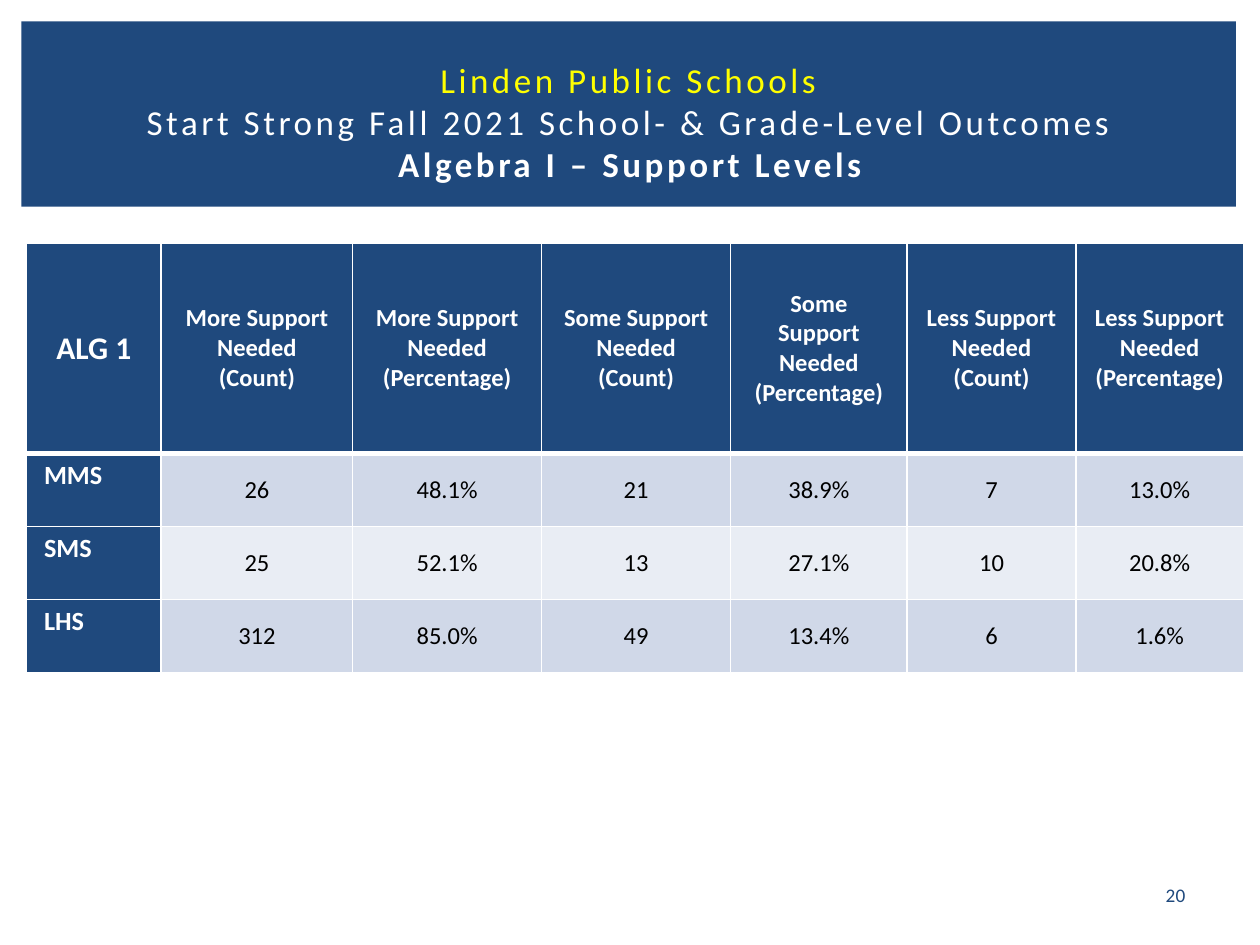
from lxml.etree import SubElement
from pptx import Presentation
from pptx.dml.color import RGBColor as RGB
from pptx.enum.shapes import MSO_SHAPE as Shape
from pptx.enum.text import MSO_ANCHOR as Anchor, MSO_AUTO_SIZE as Auto, PP_ALIGN as Align
from pptx.oxml.ns import qn
from pptx.util import Inches, Pt

# Content
TITLE = [  # text, colour, bold
    ("Linden Public Schools", "gold", False),
    ("Start Strong Fall 2021 School- & Grade-Level Outcomes", "white", False),
    ("Algebra I – Support Levels", "white", True),
]
LEVELS = ["More", "Some", "Less"]
UNITS = ["Count", "Percentage"]
SCORES = [
    ("MMS", "26", "48.1%", "21", "38.9%", "7", "13.0%"),
    ("SMS", "25", "52.1%", "13", "27.1%", "10", "20.8%"),
    ("LHS", "312", "85.0%", "49", "13.4%", "6", "1.6%"),
]
PAGE = "20"
COLS = [1.07, 1.52, 1.5, 1.5, 1.4, 1.34, 1.33]
ROWS = [1.67] + [0.58] * len(SCORES)

THEME = {
    "font": "Calibri",
    "navy": "1F497D", "gold": "FFFF00", "white": "FFFFFF", "black": "000000",
    "bands": ["D0D8E8", "E9EDF4"],
    "title": 20, "corner": 18, "school": 15, "body": 14, "page": 11,
}


def paint(run, size, color, bold=False):
    font = run.font
    font.name = THEME["font"]
    font.size = Pt(size)
    font.bold = bold
    font.color.rgb = RGB.from_string(color)


def border(cell, side, width):
    line = SubElement(cell._tc.get_or_add_tcPr(), qn(f"a:ln{side}"), w=str(Pt(width)))
    fill = SubElement(line, qn("a:solidFill"))
    SubElement(fill, qn("a:srgbClr"), val=THEME["white"])


def box(at):
    return [Inches(n) for n in at]


deck = Presentation()
deck.slide_width, deck.slide_height = Inches(10), Inches(7.5)
slide = deck.slides.add_slide(deck.slide_layouts[5])
shapes = slide.shapes

# Banner, behind the title
banner = shapes.add_shape(Shape.RECTANGLE, *box((0.17, 0.17, 9.64, 1.47)))
banner.shadow.inherit = False
banner.fill.solid()
banner.fill.fore_color.rgb = RGB.from_string(THEME["navy"])
banner.line.fill.background()
shapes._spTree.insert(2, banner._element)

# Title
title = shapes.title
title.left, title.top, title.width, title.height = box((0.28, 0.39, 9.44, 1.15))
frame = title.text_frame
frame.text = "\v".join(text for text, _, _ in TITLE)
frame.auto_size = Auto.NONE
frame.vertical_anchor = Anchor.MIDDLE
para = frame.paragraphs[0]
para.alignment = Align.CENTER
para.line_spacing = 1.0
for run, (_, color, bold) in zip(para.runs, TITLE):
    paint(run, THEME["title"], THEME[color], bold)
    run._r.get_or_add_rPr().set("spc", "200")

# Table of support levels
head = ["ALG 1"] + [f"{lev} Support Needed\n({unit})" for lev in LEVELS for unit in UNITS]
grid = [head] + SCORES
table = shapes.add_table(len(ROWS), len(COLS),
                         *box((0.21, 1.93, sum(COLS), sum(ROWS)))).table
for col, width in zip(table.columns, COLS):
    col.width = Inches(width)
for row, height in zip(table.rows, ROWS):
    row.height = Inches(height)

for r, texts in enumerate(grid):
    for c, text in enumerate(texts):
        cell = table.cell(r, c)
        dark = r == 0 or c == 0
        school = r > 0 and c == 0
        for side in "LRTB":
            thick = (r, side) in ((0, "B"), (1, "T"))
            border(cell, side, 3 if thick else 1)
        cell.fill.solid()
        band = THEME["bands"][(r - 1) % 2]
        cell.fill.fore_color.rgb = RGB.from_string(THEME["navy"] if dark else band)
        cell.margin_left = cell.margin_right = Inches(0.14)
        cell.margin_top = cell.margin_bottom = Inches(0.05)
        cell.vertical_anchor = Anchor.TOP if school else Anchor.MIDDLE
        size = "school" if school else "corner" if dark and c == 0 else "body"
        cell.text_frame.text = text
        for para in cell.text_frame.paragraphs:
            para.alignment = Align.LEFT if school else Align.CENTER
            for run in para.runs:
                paint(run, THEME[size], THEME["white" if dark else "black"], dark)

# Page number
note = shapes.add_textbox(*box((9.01, 6.95, 0.64, 0.3))).text_frame
note.word_wrap = True
note.vertical_anchor = Anchor.MIDDLE
note.text = PAGE
note.paragraphs[0].alignment = Align.CENTER
paint(note.paragraphs[0].runs[0], THEME["page"], THEME["navy"])

deck.save("out.pptx")
